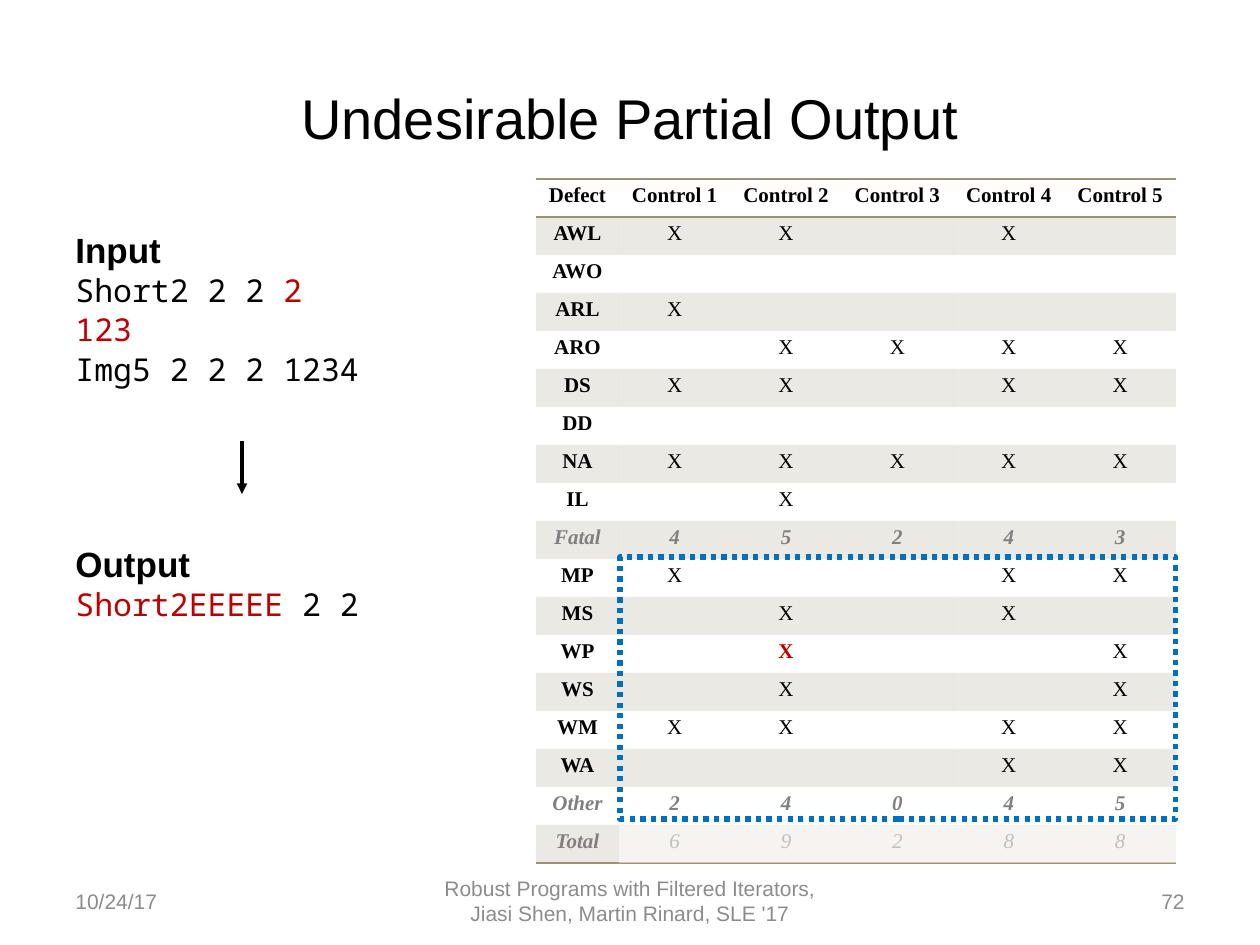
from dataclasses import dataclass

from lxml.etree import SubElement
from pptx import Presentation
from pptx.dml.color import RGBColor
from pptx.enum.dml import MSO_LINE
from pptx.enum.shapes import MSO_CONNECTOR, MSO_SHAPE
from pptx.enum.text import MSO_ANCHOR, PP_ALIGN
from pptx.oxml import parse_xml
from pptx.oxml.ns import nsdecls, qn
from pptx.util import Pt

EMU_PER_PX = 914400 / 126


@dataclass(frozen=True)
class Theme:
    ink: str = "000000"
    red: str = "C00000"
    gray: str = "808080"
    footer: str = "8C8C8C"
    tan: str = "9E9273"
    blue: str = "0070C0"
    white: str = "FFFFFF"
    sans: str = "Arial"
    serif: str = "Times New Roman"
    mono: str = "Noto Sans Mono"
    title: int = 32
    heading: int = 20
    code: int = 18
    small: int = 12


T = Theme()

DEFECTS = """AWL|X|X||X|
AWO|||||
ARL|X||||
ARO||X|X|X|X
DS|X|X||X|X
DD|||||
NA|X|X|X|X|X
IL||X|||
Fatal|4|5|2|4|3
MP|X|||X|X
MS||X||X|
WP||X|||X
WS||X|||X
WM|X|X||X|X
WA||||X|X
Other|2|4|0|4|5
Total|6|9|2|8|8"""
HEADER = ["Defect"] + [f"Control {n}" for n in range(1, 6)]
ROWS = [HEADER] + [line.split("|") for line in DEFECTS.splitlines()]
SUMMARIES = ("Fatal", "Other", "Total")


def px(n):
    return round(n * EMU_PER_PX)


def rgb(color):
    return RGBColor.from_string(color)


def add_run(p, text, size, font=T.sans, color=T.ink, bold=False, italic=False):
    r = p.add_run()
    r.text = text
    f = r.font
    f.size, f.name, f.bold, f.italic = Pt(size), font, bold, italic
    f.color.rgb = rgb(color)


def add_text(s, box, lines, align=PP_ALIGN.LEFT, anchor=MSO_ANCHOR.MIDDLE, before=0):
    """Add a text box; each line is a list of (text, format) pairs."""
    tf = s.shapes.add_textbox(*map(px, box)).text_frame
    tf.word_wrap = True
    tf.vertical_anchor = anchor
    for i, line in enumerate(lines):
        p = tf.add_paragraph() if i else tf.paragraphs[0]
        p.alignment = align
        p.space_before = Pt(before)
        for text, fmt in line:
            add_run(p, text, **fmt)


def set_fill(fill, element, color, alpha):
    """Fill with a color at an opacity given in percent."""
    fill.solid()
    fill.fore_color.rgb = rgb(color)
    clr = element.find(f"{qn('a:solidFill')}/{qn('a:srgbClr')}")
    SubElement(clr, qn("a:alpha"), val=str(alpha * 1000))


def set_borders(cell, edges):
    for i, edge in enumerate(edges):
        cell._tc.get_or_add_tcPr().insert(i, parse_xml(
            f'<a:{edge} {nsdecls("a")} w="12700"><a:solidFill>'
            f'<a:srgbClr val="{T.tan}"/></a:solidFill></a:{edge}>'))


def add_rect(s, box):
    sp = s.shapes.add_shape(MSO_SHAPE.RECTANGLE, *map(px, box))
    sp.shadow.inherit = False
    return sp


def fill_cell(cell, text, row, col):
    label = ROWS[row][0]
    summary = label in SUMMARIES
    cell.margin_left = cell.margin_right = px(9)
    cell.margin_top = cell.margin_bottom = px(5)
    p = cell.text_frame.paragraphs[0]
    p.alignment = PP_ALIGN.CENTER
    marked = (label, col) == ("WP", 2)
    if text:
        add_run(p, text, T.small, T.serif,
                color=T.red if marked else T.gray if summary else T.ink,
                bold=marked or row == 0 or col == 0 or label in ("Fatal", "Other"),
                italic=summary)
    else:
        SubElement(p._p, qn("a:endParaRPr"), sz=str(T.small * 100))
    if row % 2:
        set_fill(cell.fill, cell._tc.get_or_add_tcPr(), T.tan, 20)
    else:
        cell.fill.background()
    if row == 0:
        set_borders(cell, ("lnT", "lnB"))
    elif row == len(ROWS) - 1:
        set_borders(cell, ("lnB",))


def add_defect_table(s, x, y, w, h):
    label_w = 83
    control_w = (w - label_w) / (len(HEADER) - 1)
    row_h = h / len(ROWS)
    frame = s.shapes.add_table(len(ROWS), len(HEADER), *map(px, (x, y, w, h)))
    table = frame.table
    table.first_row = table.horz_banding = False
    style = table._tbl.tblPr.find(qn("a:tableStyleId"))
    style.text = "{2D5ABB26-0587-4C30-8999-92F81FD0307C}"
    for i, column in enumerate(table.columns):
        column.width = px(control_w if i else label_w)
    for i, (row, values) in enumerate(zip(table.rows, ROWS)):
        row.height = px(row_h)
        for j, value in enumerate(values):
            fill_cell(table.cell(i, j), value, i, j)

    veil = add_rect(s, (x + label_w, y + 644, w - label_w, 40))
    set_fill(veil.fill, veil._element.spPr, T.white, 50)
    veil.line.fill.background()

    frame = add_rect(s, (x + label_w + 1, y + 378, w - label_w - 1, 262))
    frame.fill.background()
    frame.line.color.rgb = rgb(T.blue)
    frame.line.width = Pt(3)
    frame.line.dash_style = MSO_LINE.ROUND_DOT


def add_down_arrow(s, x, y, length):
    line = s.shapes.add_connector(MSO_CONNECTOR.STRAIGHT, px(x), px(y), px(x), px(y + length))
    line.line.color.rgb = rgb(T.ink)
    line.line.width = Pt(2)
    SubElement(line.line._get_or_add_ln(), qn("a:tailEnd"), type="triangle")
    SubElement(line._element.spPr, qn("a:effectLst"))


def add_example(s, x, y, w):
    """Sample input above the output it leads to."""
    head = dict(size=T.heading, bold=True)
    code = dict(size=T.code, font=T.mono)
    wrong = dict(code, color=T.red)
    style = dict(anchor=MSO_ANCHOR.TOP, before=0.7)
    add_text(s, (x, y, w, 195), [
        [("Input", head)],
        [("Short2 2 2 ", code), ("2", wrong)],
        [("123", wrong)],
        [("Img5 2 2 2 1234", code)],
    ], **style)
    add_down_arrow(s, x + 179, y + 219, 53)
    add_text(s, (x, y + 314, w, 105), [
        [("Output", head)],
        [("Short2EEEEE", wrong), (" 2 2", code)],
    ], **style)


def add_title(s, x, y, w, h):
    add_text(s, (x, y, w, h), [[("Undesirable Partial Output", dict(size=T.title))]],
             PP_ALIGN.CENTER)


def add_footer(s, x, y, w, h):
    side, middle = 294, 400
    credit = "Robust Programs with Filtered Iterators, Jiasi Shen, Martin Rinard, SLE '17"
    for dx, width, text, align in (
            (0, side, "10/24/17", PP_ALIGN.LEFT),
            ((w - middle) / 2, middle, credit, PP_ALIGN.CENTER),
            (w - side, side, "72", PP_ALIGN.RIGHT)):
        add_text(s, (x + dx, y, width, h),
                 [[(text, dict(size=T.small, color=T.footer))]], align)


def main():
    prs = Presentation()
    prs.slide_width, prs.slide_height = px(1260), px(945)
    s = prs.slides.add_slide(prs.slide_layouts[6])
    add_defect_table(s, 536, 179, 640, 684)
    add_title(s, 63, 38, 1134, 158)
    add_example(s, 63, 222, 389)
    add_footer(s, 63, 876, 1134, 50)
    prs.save("out.pptx")


if __name__ == "__main__":
    main()
